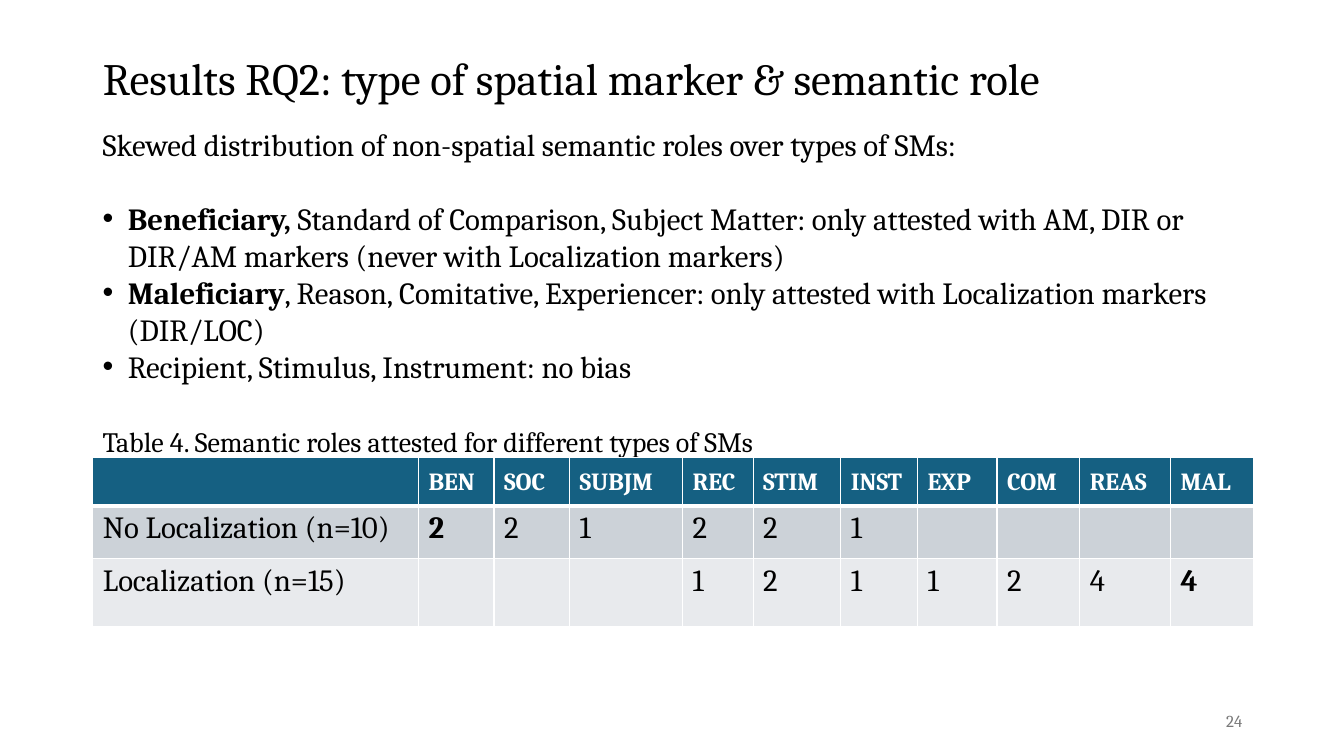
from lxml.etree import SubElement
from pptx import Presentation
from pptx.dml.color import RGBColor
from pptx.enum.text import MSO_ANCHOR, PP_ALIGN
from pptx.oxml.ns import qn
from pptx.util import Inches, Pt

INK, WHITE, GREY = "000000", "FFFFFF", "797979"
FILLS = ["156082", "CCD2D8", "E8EAED"]

BODY = [
    # bold lead, rest, size, space before, bullet
    ("", "Skewed distribution of non-spatial semantic roles over types of SMs:", 22, 0, False),
    ("Beneficiary, ", "Standard of Comparison, Subject Matter: only attested with AM, "
     "DIR or DIR/AM markers (never with Localization markers)", 22, 26.4, True),
    ("Maleficiary", ", Reason, Comitative, Experiencer: only attested with "
     "Localization markers (DIR/LOC)", 22, 0, True),
    ("", "Recipient, Stimulus, Instrument: no bias", 22, 0, True),
    ("", "Table 4. Semantic roles attested for different types of SMs", 20, 28.8, False),
]
ROLES = [
    ["", "ben", "soc", "subjm", "rec", "stim", "inst", "exp", "com", "reas", "mal"],
    ["No Localization (n=10)", "2", "2", "1", "2", "2", "1", "", "", "", ""],
    ["Localization (n=15)", "", "", "", "1", "2", "1", "1", "2", "4", "4"],
]
BOLD = {(1, 1), (2, 10)}
WIDTHS = [3.23, 0.75, 0.75, 1.12, 0.7, 0.87, 0.76, 0.79, 0.82, 0.9, 0.82]
HEIGHTS = [0.48, 0.52, 0.68]


def color(code):
    return RGBColor.from_string(code)


class Deck:
    font = "Cambria"

    def __init__(self):
        self.prs = Presentation()
        self.prs.slide_width = Inches(13.33)
        self.prs.slide_height = Inches(7.5)
        self.slide = self.prs.slides.add_slide(self.prs.slide_layouts[5])

    def style(self, run, size, code=INK, bold=False):
        font = run.font
        font.name, font.size, font.bold = self.font, Pt(size), bold
        font.color.rgb = color(code)

    def place(self, shape, left, top, width, height):
        shape.left, shape.top = Inches(left), Inches(top)
        shape.width, shape.height = Inches(width), Inches(height)

    def box(self, *area):
        shape = self.slide.shapes.add_textbox(*map(Inches, area))
        shape.text_frame.word_wrap = True
        return shape.text_frame

    def title(self, text, *area):
        shape = self.slide.shapes.title
        self.place(shape, *area)
        frame = shape.text_frame
        frame.text = text
        frame.vertical_anchor = MSO_ANCHOR.MIDDLE
        para = frame.paragraphs[0]
        para.alignment, para.line_spacing = PP_ALIGN.LEFT, 0.9
        self.style(para.runs[0], 32)

    def bullet(self, para):
        props = para._p.get_or_add_pPr()
        props.set("marL", str(Inches(0.25)))
        props.set("indent", str(-Inches(0.25)))
        SubElement(props, qn("a:buFont")).set("typeface", "Arial")
        SubElement(props, qn("a:buChar")).set("char", "•")

    def body(self, items, *area):
        frame = self.box(*area)
        for i, (lead, rest, size, gap, dot) in enumerate(items):
            para = frame.add_paragraph() if i else frame.paragraphs[0]
            para.space_before = Pt(gap)
            if dot:
                self.bullet(para)
            for text, bold in ((lead, True), (rest, False)):
                if text:
                    run = para.add_run()
                    run.text = text
                    self.style(run, size, bold=bold)

    def number(self, text, *area):
        frame = self.box(*area)
        frame.text = text
        frame.vertical_anchor = MSO_ANCHOR.MIDDLE
        para = frame.paragraphs[0]
        para.alignment = PP_ALIGN.RIGHT
        self.style(para.runs[0], 12, GREY)

    def border(self, cell, **widths):
        """Draw white edges; widths maps L, R, T, B to points."""
        props = cell._tc.get_or_add_tcPr()
        for side, width in widths.items():
            line = SubElement(props, qn(f"a:ln{side}"), w=str(Pt(width)))
            fill = SubElement(line, qn("a:solidFill"))
            SubElement(fill, qn("a:srgbClr"), val=WHITE)

    def table(self, rows, *area):
        shape = self.slide.shapes.add_table(len(rows), len(rows[0]), *map(Inches, area))
        grid = shape.table
        for col, width in zip(grid.columns, WIDTHS):
            col.width = Inches(width)
        for r, row in enumerate(rows):
            grid.rows[r].height = Inches(HEIGHTS[r])
            for c, text in enumerate(row):
                self.cell(grid.cell(r, c), text, r, (r, c) in BOLD)

    def cell(self, cell, text, r, bold):
        head = r == 0
        self.border(cell, L=1, R=1, T=3 if r == 1 else 1, B=3 if head else 1)
        cell.fill.solid()
        cell.fill.fore_color.rgb = color(FILLS[r])
        if text:
            cell.text_frame.text = text
            run = cell.text_frame.paragraphs[0].runs[0]
            self.style(run, 22, WHITE if head else INK, head or bold)
            if head:
                run._r.get_or_add_rPr().set("cap", "small")


def main():
    deck = Deck()
    deck.title("Results RQ2: type of spatial marker & semantic role", 0.92, 0.4, 11.5, 0.8)
    deck.body(BODY, 0.92, 1.2, 11.5, 5.9)
    deck.number("24", 9.42, 6.95, 3, 0.4)
    deck.table(ROLES, 0.92, 4.54, 11.5, 1.68)
    deck.prs.save("out.pptx")


if __name__ == "__main__":
    main()
